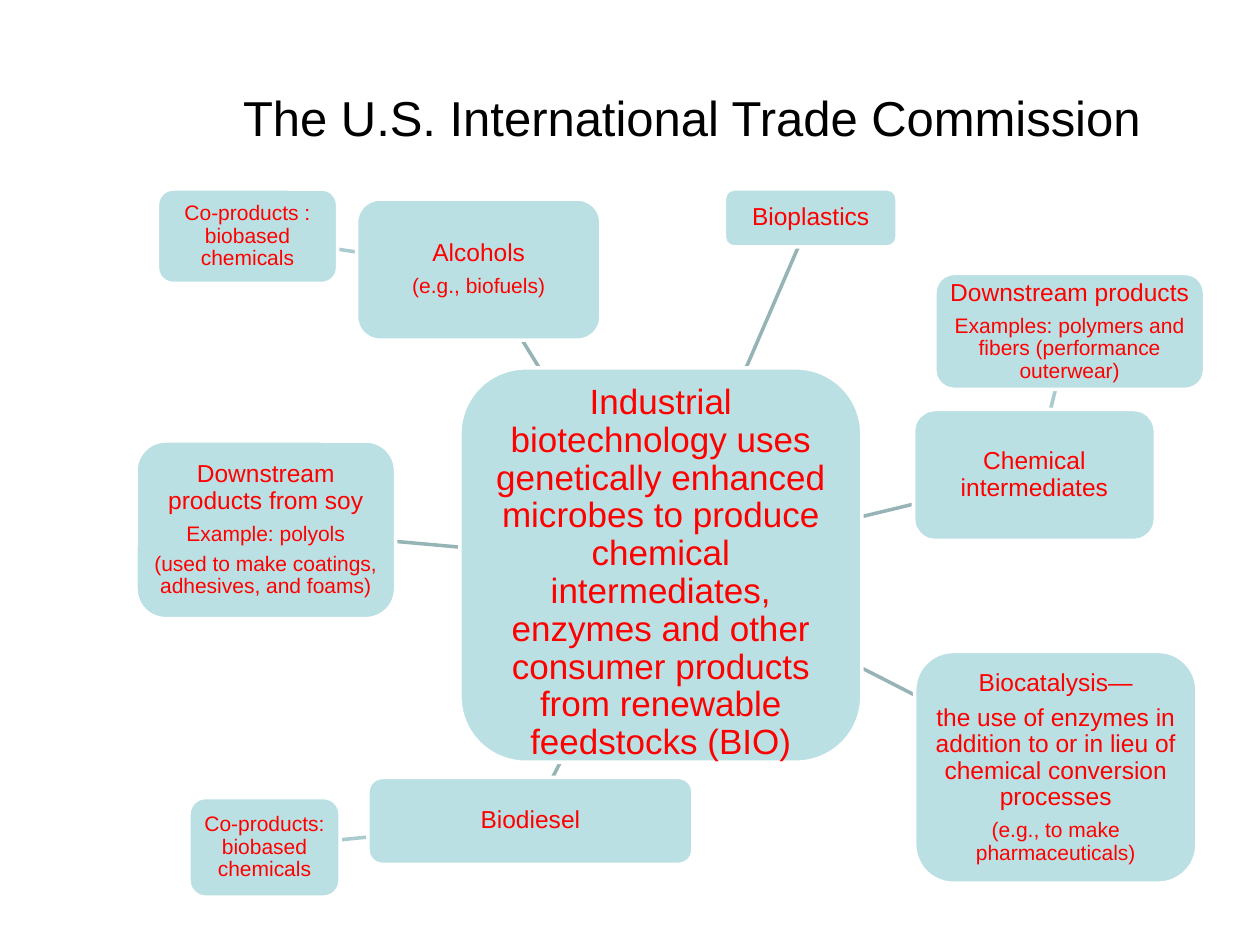
from dataclasses import dataclass

from pptx import Presentation
from pptx.dml.color import RGBColor
from pptx.enum.shapes import MSO_CONNECTOR, MSO_SHAPE
from pptx.enum.text import MSO_ANCHOR, PP_ALIGN
from pptx.oxml import parse_xml
from pptx.oxml.ns import nsdecls
from pptx.util import Inches, Pt


@dataclass(frozen=True)
class Theme:
    """Hold the colours and type sizes of the slide."""
    font: str = "Arial"
    title: RGBColor = RGBColor(0x00, 0x00, 0x00)
    text: RGBColor = RGBColor(0xFF, 0x00, 0x00)
    box: RGBColor = RGBColor(0xBB, 0xE0, 0xE3)
    border: RGBColor = RGBColor(0xFF, 0xFF, 0xFF)
    main_link: RGBColor = RGBColor(0x96, 0xB3, 0xB6)
    side_link: RGBColor = RGBColor(0xAA, 0xCB, 0xCE)
    line_width: int = 2
    title_size: int = 28
    hub_size: int = 20
    head_size: int = 14
    note_size: int = 12


THEME = Theme()
HUB, HEAD, NOTE = THEME.hub_size, THEME.head_size, THEME.note_size

BOXES = {
    "hub": ((3.65, 2.92, 3.19, 3.13), [
        ("Industrial biotechnology uses genetically enhanced microbes to produce "
         "chemical intermediates, enzymes and other consumer products from "
         "renewable feedstocks (BIO)", HUB)]),
    "bioplastics": ((5.75, 1.5, 1.37, 0.46), [("Bioplastics", HEAD)]),
    "intermediates": ((7.25, 3.25, 1.92, 1.04), [("Chemical intermediates", HEAD)]),
    "downstream": ((7.42, 2.17, 2.14, 0.92), [
        ("Downstream products", HEAD),
        ("Examples: polymers and fibers (performance outerwear)", NOTE)]),
    "biocatalysis": ((7.26, 5.17, 2.24, 1.84), [
        ("Biocatalysis—", HEAD),
        ("the use of enzymes in addition to or in lieu of chemical conversion "
         "processes", HEAD),
        ("(e.g., to make pharmaceuticals)", NOTE)]),
    "biodiesel": ((2.92, 6.17, 2.58, 0.69), [("Biodiesel", HEAD)]),
    "diesel co-products": ((1.5, 6.33, 1.2, 0.79), [
        ("Co-products: biobased chemicals", NOTE)]),
    "soy": ((1.08, 3.5, 2.06, 1.41), [
        ("Downstream products from soy", HEAD),
        ("Example: polyols", NOTE),
        ("(used to make coatings, adhesives, and foams)", NOTE)]),
    "alcohols": ((2.83, 1.58, 1.94, 1.12), [
        ("Alcohols", HEAD), ("(e.g., biofuels)", NOTE)]),
    "alcohol co-products": ((1.25, 1.5, 1.43, 0.75), [
        ("Co-products : biobased chemicals", NOTE)]),
}

MAIN_LINKS = [("hub", name) for name in (
    "alcohols", "soy", "biodiesel", "biocatalysis", "intermediates", "bioplastics")]
SIDE_LINKS = [
    ("intermediates", "downstream"),
    ("biodiesel", "diesel co-products"),
    ("alcohols", "alcohol co-products"),
]


def apply_format(target, values):
    """Set each named attribute of the target."""
    for name, value in values.items():
        setattr(target, name, value)


def format_frame(frame, left, top, right, bottom):
    """Wrap and centre a text frame with margins in inches."""
    apply_format(frame, {
        "word_wrap": True, "vertical_anchor": MSO_ANCHOR.MIDDLE,
        "margin_left": Inches(left), "margin_top": Inches(top),
        "margin_right": Inches(right), "margin_bottom": Inches(bottom)})


def write_paragraph(paragraph, text, size, color):
    """Write one centred paragraph."""
    run = paragraph.add_run()
    run.text = text
    paragraph.alignment = PP_ALIGN.CENTER
    apply_format(run.font, {"name": THEME.font, "size": Pt(size)})
    run.font.color.rgb = color


def add_title(slide, text):
    """Add the title, indented from the left."""
    shape = slide.shapes.add_textbox(Inches(0.5), Inches(0.5), Inches(9), Inches(0.86))
    format_frame(shape.text_frame, 1.08, 0.05, 0.1, 0.05)
    write_paragraph(shape.text_frame.paragraphs[0], text, THEME.title_size, THEME.title)


def add_box(slide, bounds, lines, margins):
    """Add a rounded box with its paragraphs."""
    shape = slide.shapes.add_shape(
        MSO_SHAPE.ROUNDED_RECTANGLE, *(Inches(value) for value in bounds))
    shape.shadow.inherit = False
    shape.fill.solid()
    shape.fill.fore_color.rgb = THEME.box
    shape.line.color.rgb = THEME.border
    shape.line.width = Pt(THEME.line_width)
    frame = shape.text_frame
    format_frame(frame, *margins)
    for index, (text, size) in enumerate(lines):
        paragraph = frame.add_paragraph() if index else frame.paragraphs[0]
        write_paragraph(paragraph, text, size, THEME.text)
        apply_format(paragraph, {
            "line_spacing": 0.9, "space_after": Pt(round(size * 0.35, 1))})


def center(bounds):
    """Return the centre of a box."""
    left, top, width, height = bounds
    return left + width / 2, top + height / 2


def edge_point(bounds, other):
    """Return where the line between two centres leaves the first box."""
    x, y = center(bounds)
    other_x, other_y = center(other)
    run, rise = other_x - x, other_y - y
    share = 1 / max(abs(run) / (bounds[2] / 2), abs(rise) / (bounds[3] / 2))
    return Inches(x + run * share), Inches(y + rise * share)


def add_link(slide, start, end, color):
    """Add a line across the gap between two boxes."""
    connector = slide.shapes.add_connector(
        MSO_CONNECTOR.STRAIGHT, *edge_point(start, end), *edge_point(end, start))
    connector.line.color.rgb = color
    connector.line.width = Pt(THEME.line_width)
    properties = connector._element.spPr
    properties.append(parse_xml(f"<a:effectLst {nsdecls('a')}/>"))


def main():
    """Build and save the slide."""
    presentation = Presentation()
    apply_format(presentation, {"slide_width": Inches(10), "slide_height": Inches(7.5)})
    slide = presentation.slides.add_slide(presentation.slide_layouts[6])
    add_title(slide, "The U.S. International Trade Commission")
    for links, color in ((MAIN_LINKS, THEME.main_link), (SIDE_LINKS, THEME.side_link)):
        for start, end in links:
            add_link(slide, BOXES[start][0], BOXES[end][0], color)
    for name, (bounds, lines) in BOXES.items():
        margins = (0.05, 0.13, 0.05, 0) if name == "hub" else (0.04,) * 4
        add_box(slide, bounds, lines, margins)
    presentation.save("out.pptx")


if __name__ == "__main__":
    main()
